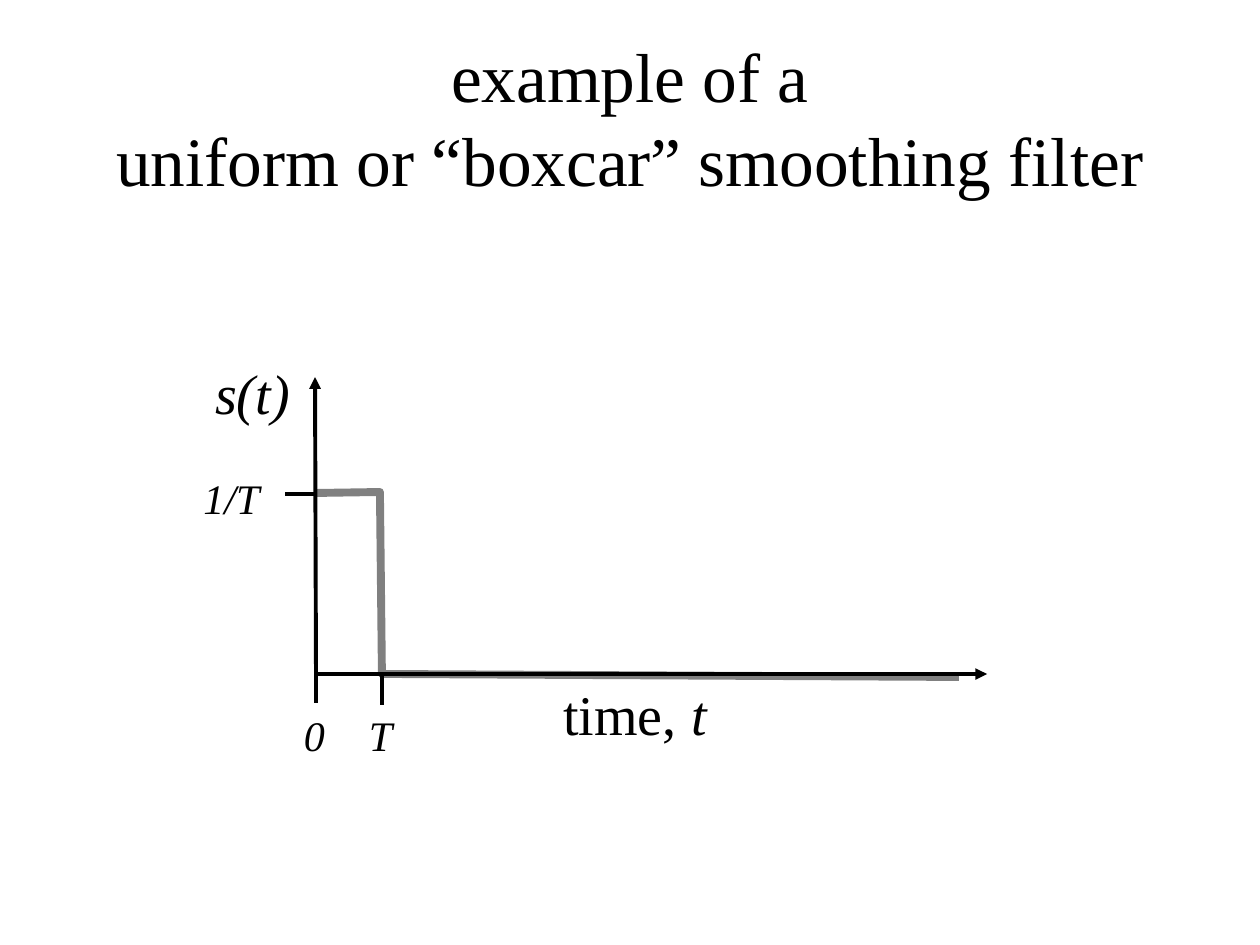
from lxml import etree
from pptx import Presentation
from pptx.dml.color import RGBColor
from pptx.enum.shapes import MSO_CONNECTOR
from pptx.enum.text import MSO_ANCHOR, PP_ALIGN
from pptx.oxml.ns import qn
from pptx.util import Pt

PX = 914400 / 126
FONT = "Times New Roman"
BLACK = RGBColor(0, 0, 0)
GREY = RGBColor(128, 128, 128)
STRAIGHT = MSO_CONNECTOR.STRAIGHT
MIDDLE = MSO_ANCHOR.MIDDLE
CENTER = PP_ALIGN.CENTER

TITLE = "example of a\vuniform or “boxcar” smoothing filter"
TITLE_BOX = (0, 38, 1260, 157)

# points, colour, width in points, arrowheads
CURVES = [
    ([(315, 493), (380, 492), (382, 674), (959, 677)], GREY, 4.5, False),
    ([(315, 377), (316, 674), (987, 674)], BLACK, 2.25, True),
]
TICKS = [
    ((316, 494), (285, 494)),
    ((316, 672), (316, 703)),
    ((382, 674), (382, 705)),
]
# runs as (text, italic), box, size in points
LABELS = [
    ([("s(t)", True)], (179, 314, 147, 157), 32),
    ([("time, ", False), ("t", True)], (514, 660, 242, 106), 32),
    ([("T", True)], (344, 708, 73, 53), 24),
    ([("0", True)], (278, 708, 73, 53), 24),
    ([("1/T", True)], (179, 471, 105, 53), 24),
]


def emu(nums):
    return [round(n * PX) for n in nums]


def style(par, size):
    par.alignment = CENTER
    par.font.name = FONT
    par.font.size = Pt(size)
    par.font.color.rgb = BLACK


def stroke(shape, color, width):
    shape.line.color.rgb = color
    shape.line.width = Pt(width)


def add_title(slide):
    title = slide.shapes.title
    title.left, title.top, title.width, title.height = emu(TITLE_BOX)
    frame = title.text_frame
    frame.text = TITLE
    frame.vertical_anchor = MIDDLE
    par = frame.paragraphs[0]
    style(par, 39.6)
    par.line_spacing = Pt(48)


def add_curve(slide, points, color, width, arrows):
    pen = slide.shapes.build_freeform(*points[0], scale=PX)
    pen.add_line_segments(points[1:], close=False)
    curve = pen.convert_to_shape()
    curve.shadow.inherit = False
    curve.fill.background()
    stroke(curve, color, width)
    line = curve.line._get_or_add_ln()
    etree.SubElement(line, qn("a:round"))
    if arrows:
        for end in ("a:headEnd", "a:tailEnd"):
            etree.SubElement(line, qn(end), type="triangle")


def add_tick(slide, start, end):
    tick = slide.shapes.add_connector(STRAIGHT, *emu(start + end))
    stroke(tick, BLACK, 2.25)
    etree.SubElement(tick._element.spPr, qn("a:effectLst"))


def add_label(slide, runs, box, size):
    frame = slide.shapes.add_textbox(*emu(box)).text_frame
    frame.word_wrap = True
    frame.vertical_anchor = MIDDLE
    par = frame.paragraphs[0]
    style(par, size)
    for text, italic in runs:
        run = par.add_run()
        run.text = text
        run.font.italic = italic


def main():
    deck = Presentation()
    deck.slide_width, deck.slide_height = emu((1260, 945))
    slide = deck.slides.add_slide(deck.slide_layouts[5])
    add_title(slide)
    for curve in CURVES:
        add_curve(slide, *curve)
    for tick in TICKS:
        add_tick(slide, *tick)
    for label in LABELS:
        add_label(slide, *label)
    deck.save("out.pptx")


if __name__ == "__main__":
    main()
